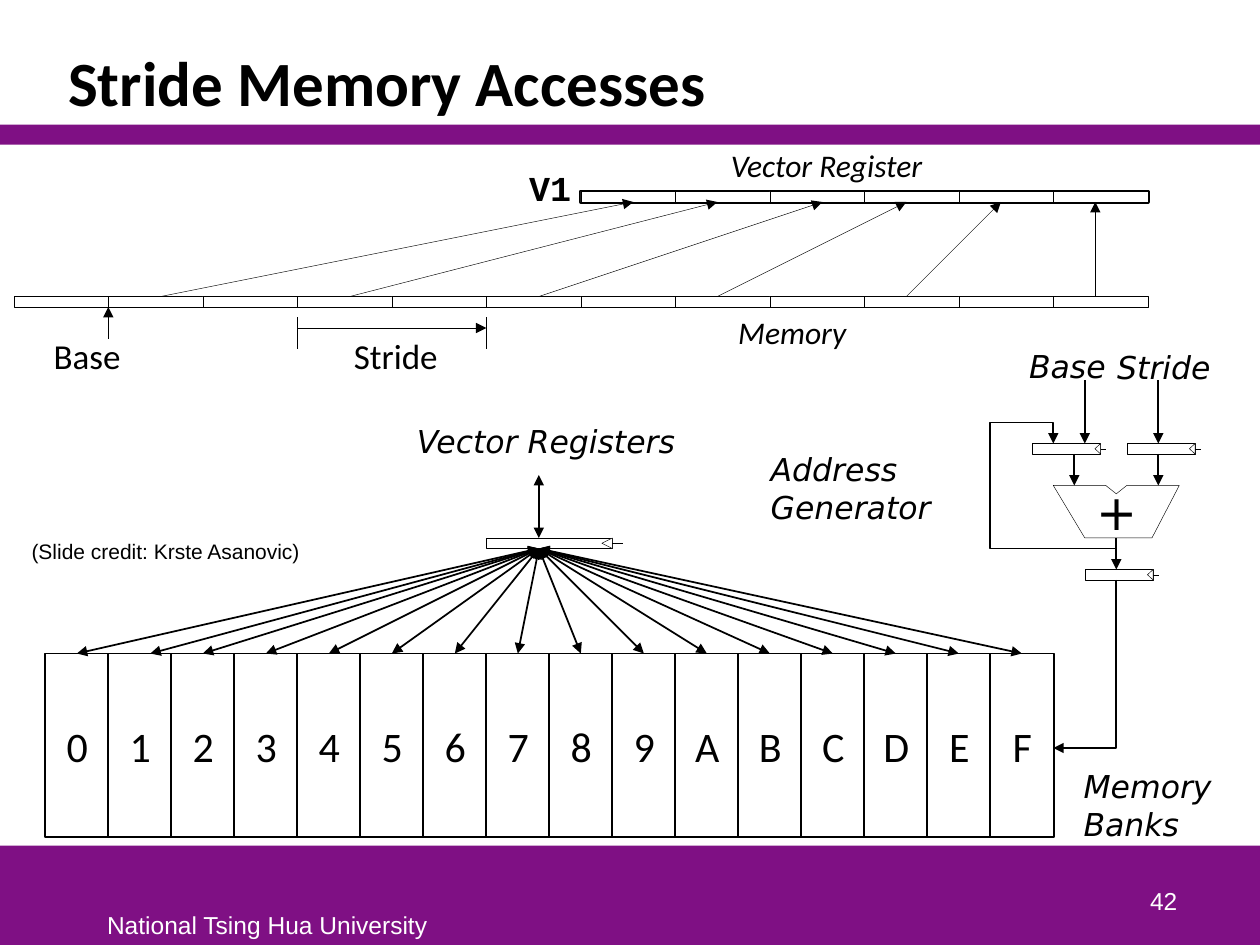
from lxml.etree import SubElement
from pptx import Presentation
from pptx.dml.color import RGBColor
from pptx.enum.shapes import MSO_CONNECTOR, MSO_SHAPE
from pptx.enum.text import MSO_ANCHOR, PP_ALIGN
from pptx.oxml.ns import qn
from pptx.util import Inches, Pt

COLORS = {name: RGBColor.from_string(value) for name, value in
          {"purple": "7F1084", "ink": "000000", "paper": "FFFFFF"}.items()}
U = Inches(1) / 12                        # one grid step
X0, Y0 = Inches(0.11), Inches(1.52)       # column 0, row 0

prs = Presentation()
prs.slide_width, prs.slide_height = Inches(10), Inches(7.5)
W, H = prs.slide_width, prs.slide_height
s = prs.slides.add_slide(prs.slide_layouts[6])


def write(tf, text, size, font, color="ink", align=PP_ALIGN.LEFT, bold=False, italic=False):
    tf.text = text
    p = tf.paragraphs[0]
    p.alignment = align
    f = p.runs[0].font
    f.size, f.name, f.bold, f.italic = Pt(size), font, bold, italic
    f.color.rgb = COLORS[color]


def draw(points, weight=1, ends=("tailEnd",), fill=None):
    """Join (column, row) points: a connector for two, an outline for more."""
    pts = [(int(X0 + c * U), int(Y0 + r * U)) for c, r in points]
    if len(pts) == 2:
        sp = s.shapes.add_connector(MSO_CONNECTOR.STRAIGHT, *pts[0], *pts[1])
    else:
        builder = s.shapes.build_freeform(*pts[0])
        builder.add_line_segments(pts[1:], close=points[0] == points[-1])
        sp = builder.convert_to_shape()
        sp.shadow.inherit = False
        if fill:
            sp.fill.solid()
            sp.fill.fore_color.rgb = COLORS[fill]
        else:
            sp.fill.background()
    sp.line.color.rgb = COLORS["ink"]
    sp.line.width = Pt(weight)
    spPr = sp.element.spPr
    for end in ends:
        SubElement(spPr.find(qn("a:ln")), qn("a:" + end), type="triangle")
    if len(pts) == 2:
        SubElement(spPr, qn("a:effectLst"))


# Purple bands
for top, height in ((0.895, 0.105), (0.132, 0.021)):
    sp = s.shapes.add_shape(MSO_SHAPE.RECTANGLE, 0, int(H * top), W, int(H * height))
    sp.shadow.inherit = False
    sp.fill.solid()
    sp.fill.fore_color.rgb = COLORS["purple"]
    sp.line.fill.background()

# Boxes: column, row, width, height, line weight, label
latches = [(45, 33, 12), (97, 24, 6.5), (106, 24, 6.5), (102, 36, 6.5)]
boxes = [(3 + 6 * i, 44, 6.1, 17.5, 1, d) for i, d in enumerate("0123456789ABCDEF")]
boxes += [(c, r, w, 1, 0.25, "") for c, r, w in latches]
boxes += [(54, 0, 54, 1, 2.25, "")]
boxes += [(54 + 9 * i, 0, 9, 1, 0.25, "") for i in range(6)]
boxes += [(9 * i, 10, 9, 1, 0.25, "") for i in range(12)]
for c, r, w, h, weight, label in boxes:
    sp = s.shapes.add_shape(MSO_SHAPE.RECTANGLE, int(X0 + c * U), int(Y0 + r * U),
                            int(w * U), int(h * U))
    sp.shadow.inherit = False
    sp.fill.solid()
    sp.fill.fore_color.rgb = COLORS["paper"]
    sp.line.color.rgb = COLORS["ink"]
    sp.line.width = Pt(weight)
    if label:
        sp.text_frame.vertical_anchor = MSO_ANCHOR.MIDDLE
        write(sp.text_frame, label, 24, "Calibri", align=PP_ALIGN.CENTER)

# Clock marks on the latches
for c, r, w in latches:
    right, depth = c + w, w / 12
    draw([(right, r + 1), (right - depth, r + 0.5), (right, r), (right, r + 1)],
         0.25, (), "paper")
    draw([(right, r + 0.5), (right + max(depth, 0.5), r + 0.5)], 0.25, ())

# Memory banks to the vector register latch
both = ("headEnd", "tailEnd")
for i in range(16):
    draw([(13 if i == 1 else 6 + 6 * i, 44), (50, 34)], ends=both)
draw([(50, 27), (50, 33)], ends=both)

# Address generator
draw([(99, 28), (102, 33), (108.4, 33), (111, 28), (106, 28), (105, 28.8), (104, 28), (99, 28)],
     0.25, ())
for path_points in (
    [(105, 33), (105, 36)],
    [(101, 25), (101, 28)],
    [(109, 25), (109, 28)],
    [(102, 18), (102, 24)],
    [(109, 18), (109, 24)],
    [(105, 34), (93, 34), (93, 22), (99, 22), (99, 24)],
    [(105, 37), (105, 53), (99, 53)],
):
    draw(path_points)

# Strided loads, base and stride marks
for start, end in ((14, 59), (32, 67), (50, 77), (67, 85), (85, 94), (103, 103)):
    draw([(start, 10), (end, 1)], 0.25)
draw([(9, 14), (9, 11)], 0.25)
for c in (27, 45):
    draw([(c, 12), (c, 15)], 0.25, ())
draw([(27, 13), (45, 13)], 0.25)

# Labels: text, column, row, width, height, wrap, anchor, format
TOP, MID, BOTTOM = MSO_ANCHOR.TOP, MSO_ANCHOR.MIDDLE, MSO_ANCHOR.BOTTOM
plain = dict(size=20, font="Calibri")
slanted = dict(size=18, font="Calibri", italic=True)
wide = dict(size=18, font="DejaVu Sans", italic=True)
footer = dict(size=14, font="Arial", color="paper")
labels = [
    ("Stride Memory Accesses", 4, -15.2, 107.6, 8.9, True, BOTTOM,
     dict(size=36, font="Calibri", bold=True)),
    ("V1", 47.9, -3, 6.5, 5.3, False, MID, dict(size=20, font="Courier New", bold=True)),
    ("Base", 2.6, 13, 8.9, 5.3, False, MID, plain),
    ("Stride", 31.2, 13, 10.6, 5.3, False, MID, plain),
    ("Memory", 67.8, 11, 13.6, 4.8, False, MID, slanted),
    ("Vector Register", 67.1, -4.9, 21.8, 4.8, False, MID, slanted),
    ("+", 101.9, 27, 5.2, 6.8, True, MID, dict(size=28, font="DejaVu Sans")),
    ("Base", 95.5, 14.2, 11.6, 4.8, True, MID, wide),
    ("Stride", 103.9, 14.3, 14, 4.8, True, MID, wide),
    ("Vector Registers", 37.2, 21.4, 27.1, 4.8, False, MID, wide),
    ("Memory Banks", 100.7, 54.2, 14.8, 8.5, True, MID, wide),
    ("Address Generator", 70.9, 24, 21, 8.5, True, MID, wide),
    ("(Slide credit: Krste Asanovic)", 0.5, 32.5, 28.2, 3.6, False, TOP,
     dict(size=12, font="Arial")),
    ("42", 87, 63.5, 25, 6, True, BOTTOM, dict(footer, align=PP_ALIGN.RIGHT)),
    ("National Tsing Hua University", 7.7, 67.8, 33.1, 4, False, TOP, footer),
]
for text, c, r, w, h, wrap, anchor, style in labels:
    tf = s.shapes.add_textbox(int(X0 + c * U), int(Y0 + r * U),
                              int(w * U), int(h * U)).text_frame
    tf.word_wrap, tf.vertical_anchor = wrap, anchor
    write(tf, text, **style)

prs.save("out.pptx")
